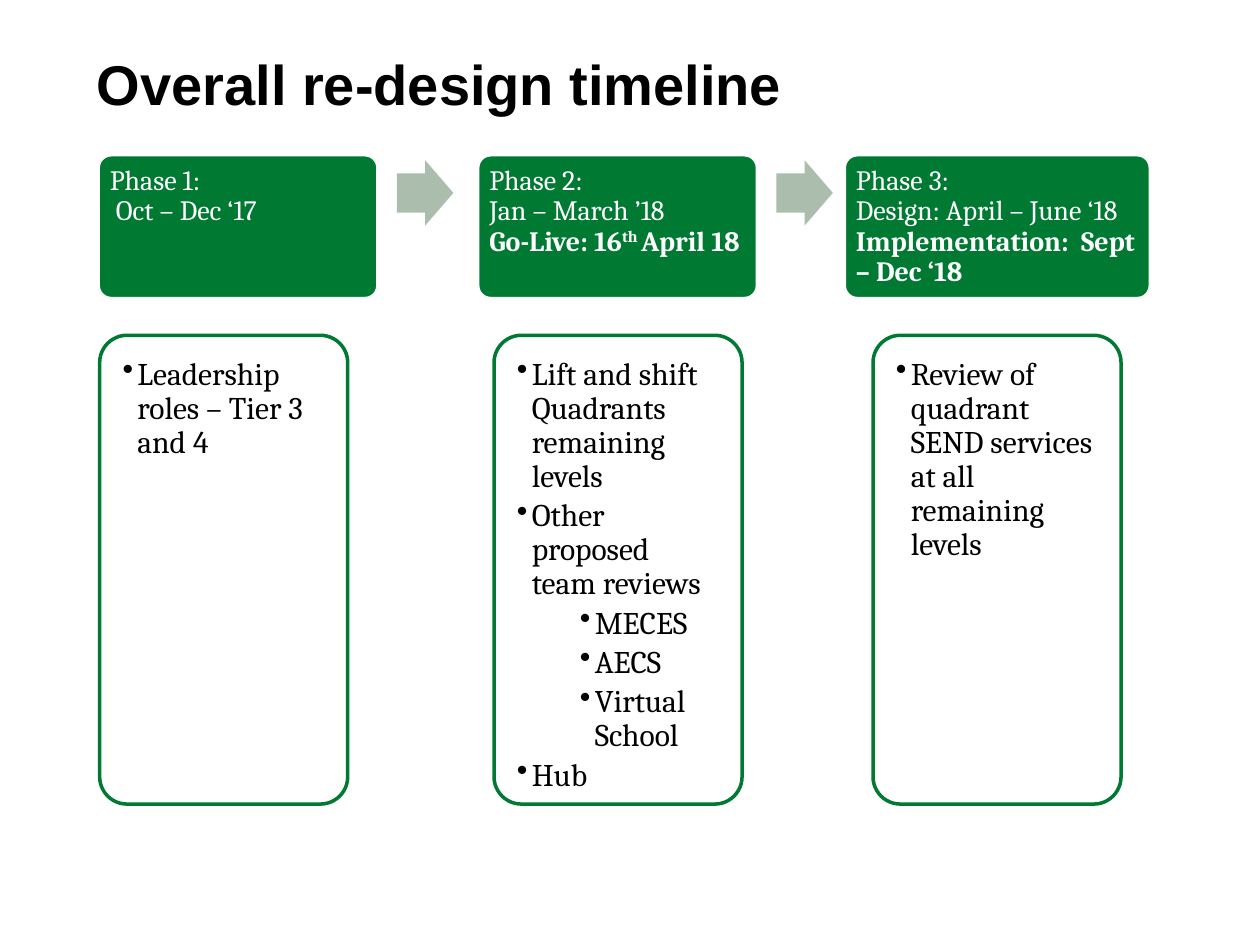
from lxml.etree import SubElement
from pptx import Presentation
from pptx.dml.color import RGBColor
from pptx.enum.shapes import MSO_SHAPE
from pptx.enum.text import MSO_ANCHOR, PP_ALIGN
from pptx.oxml.ns import qn
from pptx.util import Cm, Pt

COLORS = {"green": "007A33", "sage": "ABBEAE", "white": "FFFFFF", "black": "000000"}

# Each phase: left and width of head, left of card, head runs, list of (level, text)
PHASES = [
    (1.98, 5.64, 2.01,
     [("Phase 1:\n Oct – Dec ‘17", {})],
     [(1, "Leadership roles – Tier 3 and 4")]),
    (9.63, 5.64, 9.96,
     [("Phase 2:\nJan – March ’18\n", {}), ("Go-Live: 16", {"bold": True}),
      ("th ", {"bold": True, "sup": True}), ("April 18", {"bold": True})],
     [(1, "Lift and shift Quadrants remaining levels"),
      (1, "Other proposed team reviews"),
      (2, "MECES"), (2, "AECS"), (2, "Virtual School"),
      (1, "Hub")]),
    (17.02, 6.17, 17.6,
     [("Phase 3:\nDesign: April – June ‘18\n", {}),
      ("Implementation:  Sept – Dec ‘18", {"bold": True})],
     [(1, "Review of quadrant SEND services at all remaining levels")]),
]


def rgb(name):
    return RGBColor.from_string(COLORS[name])


def add_text(para, text, size=18, color="black", font="Cambria", bold=False, sup=False):
    """Add text to a paragraph; a newline becomes a line break."""
    for i, part in enumerate(text.split("\n")):
        if i:
            para.add_line_break()
        if not part:
            continue
        run = para.add_run()
        run.text = part
        run.font.size, run.font.name, run.font.bold = Pt(size), font, bold
        run.font.color.rgb = rgb(color)
        if sup:
            run._r.get_or_add_rPr().set("baseline", "30000")


def set_frame(frame, left, top, right, bottom):
    frame.word_wrap = True
    frame.vertical_anchor = MSO_ANCHOR.TOP
    frame.margin_left, frame.margin_top = Cm(left), Cm(top)
    frame.margin_right, frame.margin_bottom = Cm(right), Cm(bottom)


def set_para(para, after=0):
    para.alignment = PP_ALIGN.LEFT
    para.line_spacing = 0.9
    para.space_after = Pt(after)


def set_bullet(para, level):
    para.level = level
    props = para._p.get_or_add_pPr()
    props.set("marL", str(Cm(0.3 + 1.27 * (level - 1))))
    props.set("indent", str(-Cm(0.3)))
    SubElement(props, qn("a:buChar")).set("char", "•")


def add_box(slide, kind, left, top, width, height, fill, line=None, adjust=()):
    box = slide.shapes.add_shape(kind, Cm(left), Cm(top), Cm(width), Cm(height))
    box.shadow.inherit = False
    box.fill.solid()
    box.fill.fore_color.rgb = rgb(fill)
    if line:
        box.line.color.rgb = rgb(line)
        box.line.width = Pt(2)
    else:
        box.line.fill.background()
    for i, value in enumerate(adjust):
        box.adjustments[i] = value
    return box


def add_title(slide, text):
    title = slide.shapes.title
    title.left, title.top, title.width, title.height = Cm(1.7), Cm(0.74), Cm(21.8), Cm(2.2)
    set_frame(title.text_frame, 0.25, 0.25, 0.25, 0.13)
    para = title.text_frame.paragraphs[0]
    para.alignment = PP_ALIGN.LEFT
    add_text(para, text, size=32, font="Arial", bold=True)


def add_head(slide, left, width, runs):
    box = add_box(slide, MSO_SHAPE.ROUNDED_RECTANGLE, left, 3.12, width, 2.9,
                  "green", "white", [0.09])
    set_frame(box.text_frame, 0.16, 0.16, 0.16, 0.8)
    para = box.text_frame.paragraphs[0]
    set_para(para)
    for text, style in runs:
        add_text(para, text, size=16, color="white", **style)


def add_card(slide, left, items):
    box = add_box(slide, MSO_SHAPE.ROUNDED_RECTANGLE, left, 6.76, 5, 9.45,
                  "white", "green", [0.11])
    frame = box.text_frame
    set_frame(frame, 0.3, 0.3, 0.3, 0.3)
    for i, (level, text) in enumerate(items):
        para = frame.add_paragraph() if i else frame.paragraphs[0]
        set_para(para, after=3)
        set_bullet(para, level)
        add_text(para, text)


def add_arrow(slide, left):
    add_box(slide, MSO_SHAPE.RIGHT_ARROW, left, 3.23, 1.14, 1.32, "sage", adjust=[0.6, 0.5])


def main():
    deck = Presentation()
    deck.slide_width, deck.slide_height = Cm(25.4), Cm(19.05)
    slide = deck.slides.add_slide(deck.slide_layouts[5])
    add_title(slide, "Overall re-design timeline")

    # Phases, with an arrow after each but the last
    for i, (left, width, card, runs, items) in enumerate(PHASES):
        add_head(slide, left, width, runs)
        add_card(slide, card, items)
        if i < len(PHASES) - 1:
            add_arrow(slide, left + width + 0.38)

    deck.save("out.pptx")


if __name__ == "__main__":
    main()
